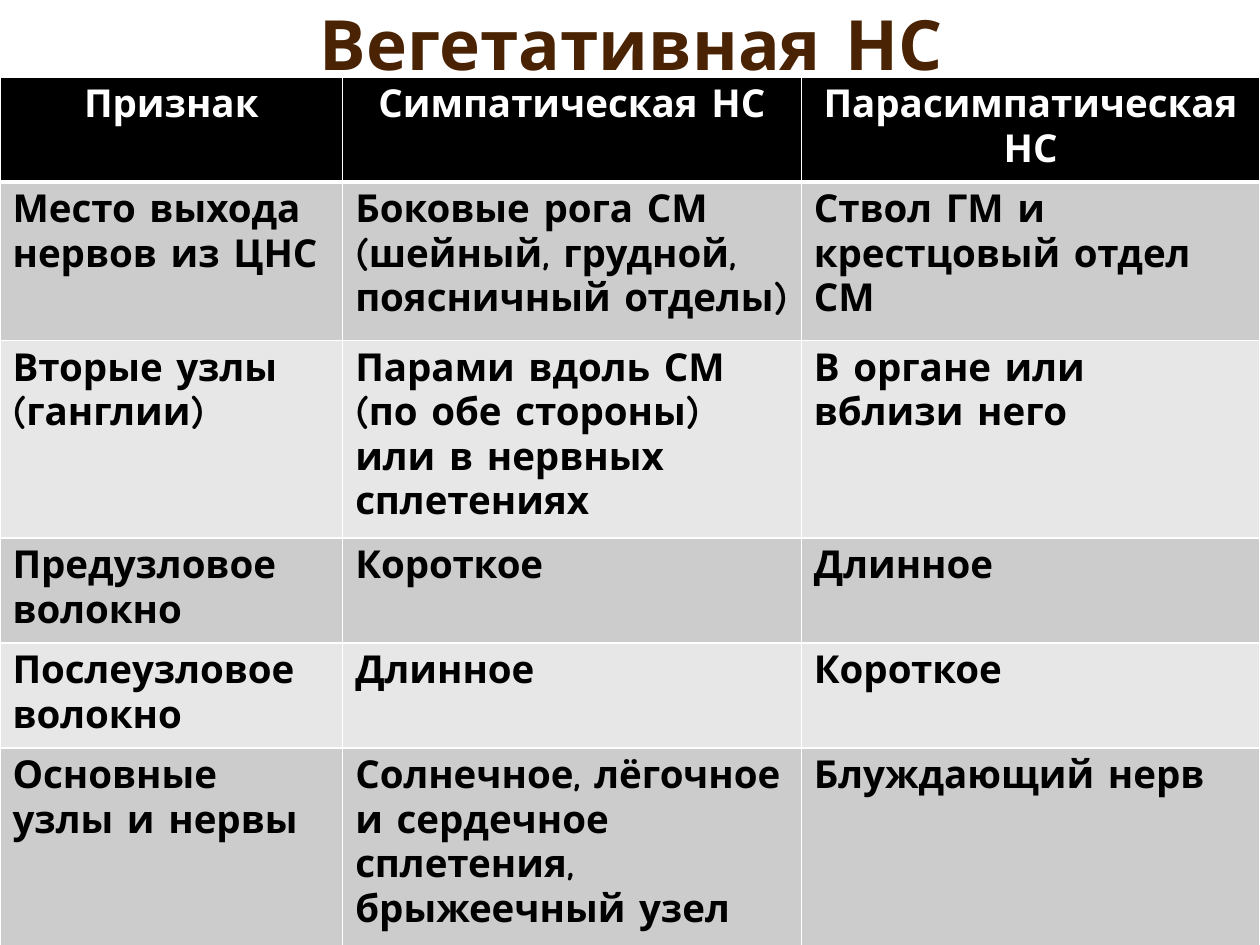
from dataclasses import dataclass

import pptx
import pptx.dml.color
import pptx.enum.text
import pptx.oxml
import pptx.oxml.ns
import pptx.util

Align = pptx.enum.text.PP_ALIGN
Inches = pptx.util.Inches


@dataclass(frozen=True)
class Theme:
    font: str = "Comic Neue"
    title_size: float = 39.6
    table_size: float = 22
    title: str = "492303"
    header_text: str = "FFFFFF"
    header_fill: str = "000000"
    body_text: str = "000000"
    bands: tuple[str, str] = ("CCCCCC", "E7E7E7")
    border: str = "FFFFFF"
    thin: float = 1
    thick: float = 3


@dataclass(frozen=True)
class Row:
    height: float
    feature: str
    sympathetic: str
    parasympathetic: str

    def texts(self) -> tuple[str, str, str]:
        return self.feature, self.sympathetic, self.parasympathetic


THEME = Theme()
WIDTH, HEIGHT = 10, 7.5
COLUMN_SHARES = (0.272, 0.364, 0.364)
TABLE_TOP = 0.61
ROWS = (
    Row(0.5, "Признак", "Симпатическая НС", "Парасимпатическая НС"),
    Row(1.26, "Место выхода нервов из ЦНС",
        "Боковые рога СМ (шейный, грудной, поясничный отделы)",
        "Ствол ГМ и крестцовый отдел СМ"),
    Row(0.84, "Вторые узлы (ганглии)",
        "Парами вдоль СМ (по обе стороны) или в нервных сплетениях",
        "В органе или вблизи него"),
    Row(0.69, "Предузловое волокно", "Короткое", "Длинное"),
    Row(0.55, "Послеузловое волокно", "Длинное", "Короткое"),
    Row(1.53, "Основные узлы и нервы",
        "Солнечное, лёгочное и сердечное сплетения, брыжеечный узел",
        "Блуждающий нерв"),
)


def color(value: str) -> pptx.dml.color.RGBColor:
    return pptx.dml.color.RGBColor.from_string(value)


def write(frame, text: str, size: float, ink: str, align: Align) -> None:
    frame.text = text
    para = frame.paragraphs[0]
    para.alignment = align
    para.font.name = THEME.font
    para.font.size = pptx.util.Pt(size)
    para.font.bold = True
    para.font.color.rgb = color(ink)


def set_border(cell, side: str, width: float) -> None:
    line = pptx.oxml.parse_xml(
        f'<a:ln{side} {pptx.oxml.ns.nsdecls("a")} w="{pptx.util.Pt(width)}">'
        f'<a:solidFill><a:srgbClr val="{THEME.border}"/></a:solidFill></a:ln{side}>'
    )
    properties = cell._tc.get_or_add_tcPr()
    position = sum(child.tag.startswith(pptx.oxml.ns.qn("a:ln")) for child in properties)
    properties.insert(position, line)


def draw_title(page, text: str) -> None:
    box = page.shapes.add_textbox(Inches(0.51), 0, Inches(0.9 * WIDTH), Inches(0.68))
    frame = box.text_frame
    frame.word_wrap = True
    frame.vertical_anchor = pptx.enum.text.MSO_ANCHOR.MIDDLE
    write(frame, text, THEME.title_size, THEME.title, Align.CENTER)


def draw_cell(cell, text: str, row_index: int) -> None:
    header = row_index == 0
    cell.fill.solid()
    cell.fill.fore_color.rgb = color(
        THEME.header_fill if header else THEME.bands[(row_index - 1) % 2])
    write(cell.text_frame, text, THEME.table_size,
          THEME.header_text if header else THEME.body_text,
          Align.CENTER if header else Align.LEFT)
    for side in "LRTB":
        edge = (side == "B" and row_index == 0) or (side == "T" and row_index == 1)
        set_border(cell, side, THEME.thick if edge else THEME.thin)


def draw_table(page, rows: tuple[Row, ...]) -> None:
    total = sum(row.height for row in rows)
    table = page.shapes.add_table(
        len(rows), len(COLUMN_SHARES), 0, Inches(TABLE_TOP), Inches(WIDTH), Inches(total)
    ).table
    for column, share in zip(table.columns, COLUMN_SHARES):
        column.width = Inches(share * WIDTH)
    for row_index, row in enumerate(rows):
        table.rows[row_index].height = Inches(row.height)
        for column_index, text in enumerate(row.texts()):
            draw_cell(table.cell(row_index, column_index), text, row_index)


def main() -> None:
    deck = pptx.Presentation()
    deck.slide_width, deck.slide_height = Inches(WIDTH), Inches(HEIGHT)
    page = deck.slides.add_slide(deck.slide_layouts[6])
    draw_title(page, "Вегетативная НС")
    draw_table(page, ROWS)
    deck.save("out.pptx")


if __name__ == "__main__":
    main()
